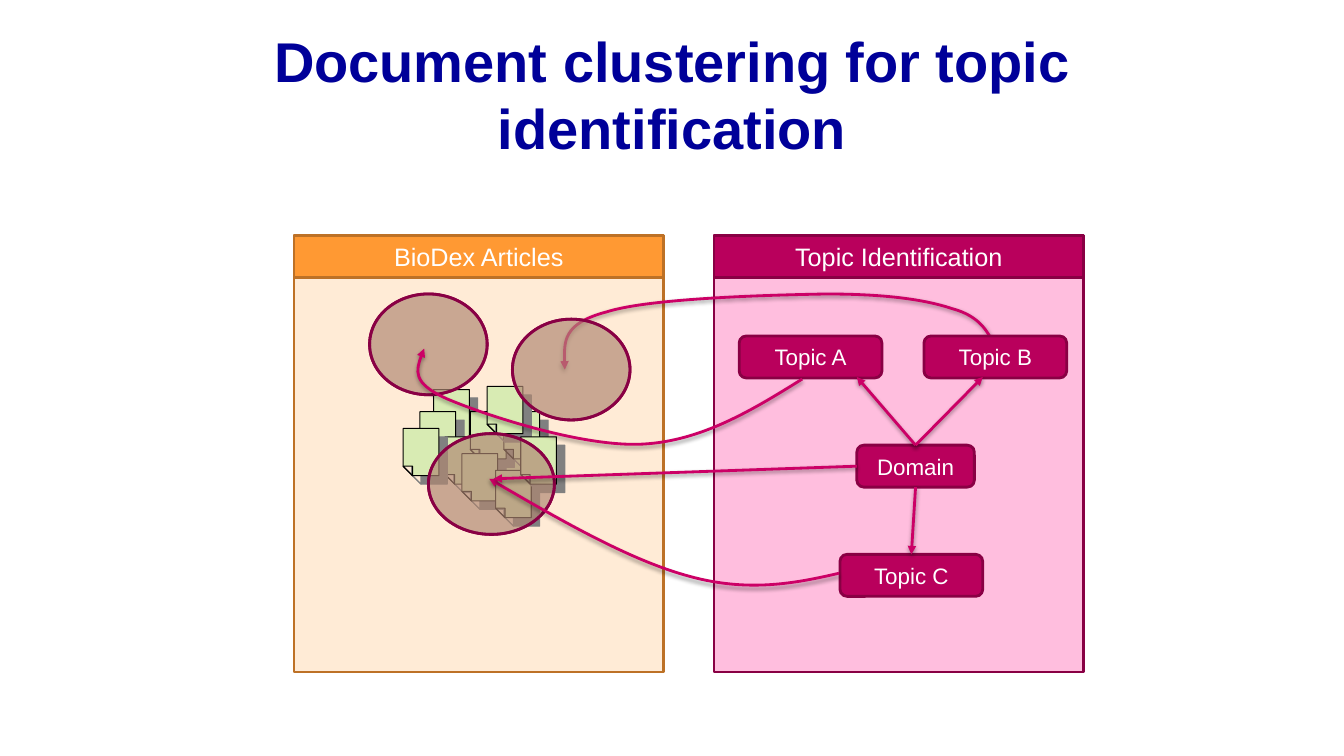
import lxml.etree
import pptx
import pptx.dml.color
import pptx.enum.shapes
import pptx.enum.text
import pptx.oxml.ns
import pptx.util

PX = 9525
FONT = "Arial"
COLORS = {
    "title": "000099", "text": "FFFFFF",
    "articles": "FF9933", "articles_line": "BD7126", "articles_body": "FFEBD6",
    "topics": "B9005C", "topics_line": "890044", "topics_body": "FFBEDE",
    "page": "D8EBB3", "page_line": "000000", "page_shadow": "808080",
    "cluster_under": "DD8047", "cluster_under_line": "97004B", "cluster": "968C8C",
    "link": "CC0066", "link_shadow": "000000",
}
PRESET = pptx.enum.shapes.MSO_SHAPE
qn = pptx.oxml.ns.qn


def rgb(name):
    """Return the named colour."""
    return pptx.dml.color.RGBColor.from_string(COLORS[name])


def add_xml(parent, tag, **attributes):
    """Append a DrawingML element and return it."""
    return lxml.etree.SubElement(parent, qn(tag), {k: str(v) for k, v in attributes.items()})


def set_line(shape, color, width=2):
    """Give a shape a solid outline."""
    shape.line.color.rgb = rgb(color)
    shape.line.width = pptx.util.Pt(width)


def set_shadow(shape, color, alpha, blur, distance, angle):
    """Give a shape an outer shadow, with lengths in points."""
    effects = add_xml(shape.element.spPr, "a:effectLst")
    shadow = add_xml(effects, "a:outerShdw", blurRad=int(blur * 12700),
                     dist=int(distance * 12700), dir=angle * 60000,
                     algn="tl", rotWithShape=0)
    add_xml(add_xml(shadow, "a:srgbClr", val=COLORS[color]), "a:alpha", val=alpha * 1000)


def set_font(paragraph, size, color, bold=False):
    """Centre a paragraph and format its runs."""
    paragraph.alignment = pptx.enum.text.PP_ALIGN.CENTER
    for run in paragraph.runs:
        run.font.name, run.font.size, run.font.bold = FONT, pptx.util.Pt(size), bold
        run.font.color.rgb = rgb(color)


def add_block(slide, preset, box, fill, line, label="", size=16):
    """Add a filled preset shape with an optional centred label."""
    block = slide.shapes.add_shape(preset, *(n * PX for n in box))
    block.fill.solid()
    block.fill.fore_color.rgb = rgb(fill)
    set_line(block, line)
    block.shadow.inherit = False
    if label:
        block.text_frame.text = label
        block.text_frame.vertical_anchor = pptx.enum.text.MSO_ANCHOR.MIDDLE
        set_font(block.text_frame.paragraphs[0], size, "text")
    return block


def add_title(slide, box, text):
    """Place and format the slide title."""
    title = slide.shapes.title
    title.left, title.top, title.width, title.height = (n * PX for n in box)
    frame = title.text_frame
    frame.text = text
    frame.word_wrap = True
    frame.auto_size = pptx.enum.text.MSO_AUTO_SIZE.NONE
    frame.vertical_anchor = pptx.enum.text.MSO_ANCHOR.BOTTOM
    set_font(frame.paragraphs[0], 40, "title", True)


def add_panel(slide, box, heading, theme):
    """Add a panel body with a heading bar across its top."""
    left, top, width, _ = box
    line = theme + "_line"
    add_block(slide, PRESET.RECTANGLE, box, theme + "_body", line)
    add_block(slide, PRESET.RECTANGLE, (left, top, width, 40), theme, line, heading, 18)


def add_pages(slide, box):
    """Scatter the folded article pages inside the panel."""
    width, height, fold = 34, 45, 9
    crease = height - fold
    for x, y in ((133, 147), (120, 168), (144, 192), (184, 192), (168, 168), (200, 168),
                 (184, 144), (160, 208), (192, 224), (216, 192), (104, 184)):
        left, top = box[0] + x, box[1] + y
        outline = slide.shapes.build_freeform(left + fold, top + height, PX)
        outline.add_line_segments([(left, top + crease), (left, top), (left + width, top),
                                   (left + width, top + height)])
        outline.move_to(left, top + crease)
        outline.add_line_segments([(left + fold, top + crease), (left + fold, top + height)])
        page = outline.convert_to_shape()
        page.fill.solid()
        page.fill.fore_color.rgb = rgb("page")
        set_line(page, "page_line", 0.75)
        set_shadow(page, "page_shadow", 100, 0, 8.5, 45)


def add_cluster(slide, box, x, y, width):
    """Add a translucent two-layer cluster ellipse inside the panel."""
    for fill, line in (("cluster_under", "cluster_under_line"), ("cluster", "topics_line")):
        ellipse = add_block(slide, PRESET.OVAL, (box[0] + x, box[1] + y, width, 96), fill, line)
        color = ellipse.element.spPr.find(qn("a:solidFill")).find(qn("a:srgbClr"))
        add_xml(color, "a:alpha", val=43000)


def add_topics(slide, box):
    """Add the domain and topic boxes and return them by label."""
    places = {"Domain": (136, 200, 112), "Topic A": (24, 96, 136),
              "Topic B": (200, 96, 136), "Topic C": (120, 304, 136)}
    return {label: add_block(slide, PRESET.ROUNDED_RECTANGLE,
                             (box[0] + x, box[1] + y, width, 40),
                             "topics", "topics_line", label)
            for label, (x, y, width) in places.items()}


def finish_link(link):
    """Colour a link and give it an arrowhead and a soft shadow."""
    set_line(link, "link")
    add_xml(link.line._get_or_add_ln(), "a:tailEnd", type="triangle")
    set_shadow(link, "link_shadow", 38, 3.1, 1.6, 90)


def add_curve(slide, box, points):
    """Add a Bézier arrow through the points, three for each segment."""
    start, *rest = [(box[0] + x, box[1] + y) for x, y in points]
    builder = slide.shapes.build_freeform(*start, PX)
    builder.add_line_segments(rest, close=False)
    curve = builder.convert_to_shape()
    outline = next(curve.element.iter(qn("a:path")))
    segments = outline.findall(qn("a:lnTo"))
    for i in range(0, len(segments), 3):
        bezier = add_xml(outline, "a:cubicBezTo")
        for segment in segments[i:i + 3]:
            bezier.append(segment[0])
            outline.remove(segment)
    curve.fill.background()
    finish_link(curve)


def add_domain_links(slide, box, topics):
    """Link the domain to its topics and to the central cluster."""
    for side, x, y, target in ((0, 536, 135, None), (0, 656, 135, None),
                               (2, 588, 304, "Topic C"), (1, 190, 232, None)):
        end = (box[0] + x) * PX, (box[1] + y) * PX
        link = slide.shapes.add_connector(pptx.enum.shapes.MSO_CONNECTOR.STRAIGHT, *end, *end)
        link.begin_connect(topics["Domain"], side)
        if target:
            link.end_connect(topics[target], 0)
        finish_link(link)


def add_diagram(slide, box):
    """Build both panels and the links between them."""
    left, top, width, height = box
    articles = (left, top, 352, height)
    identification = (left + width - 352, top, 352, height)
    add_panel(slide, identification, "Topic Identification", "topics")
    add_panel(slide, articles, "BioDex Articles", "articles")
    add_pages(slide, articles)
    add_cluster(slide, articles, 128, 189, 120)
    add_curve(slide, box, [(667, 105), (661, 92), (653, 77), (627, 70), (600, 61), (562, 56),
                           (507, 56), (452, 57), (339, 60), (298, 73), (256, 84),
                           (257, 106), (258, 128)])
    add_cluster(slide, articles, 208, 80, 112)
    add_cluster(slide, articles, 72, 56, 112)
    topics = add_topics(slide, identification)
    add_curve(slide, box, [(484, 137), (436, 167), (388, 196), (332, 199), (275, 202),
                           (181, 171), (146, 156), (112, 141), (117, 124), (124, 108)])
    add_curve(slide, box, [(519, 322), (476, 332), (432, 340), (377, 325), (321, 310),
                           (253, 271), (186, 232)])
    add_domain_links(slide, box, topics)


def main():
    """Build and save the presentation."""
    deck = pptx.Presentation()
    deck.slide_width, deck.slide_height = 1280 * PX, 720 * PX
    slide = deck.slides.add_slide(deck.slide_layouts[5])
    add_title(slide, (160, 46, 960, 112), "Document clustering for topic identification")
    add_diagram(slide, (280, 224, 752, 416))
    deck.save("out.pptx")


if __name__ == "__main__":
    main()
